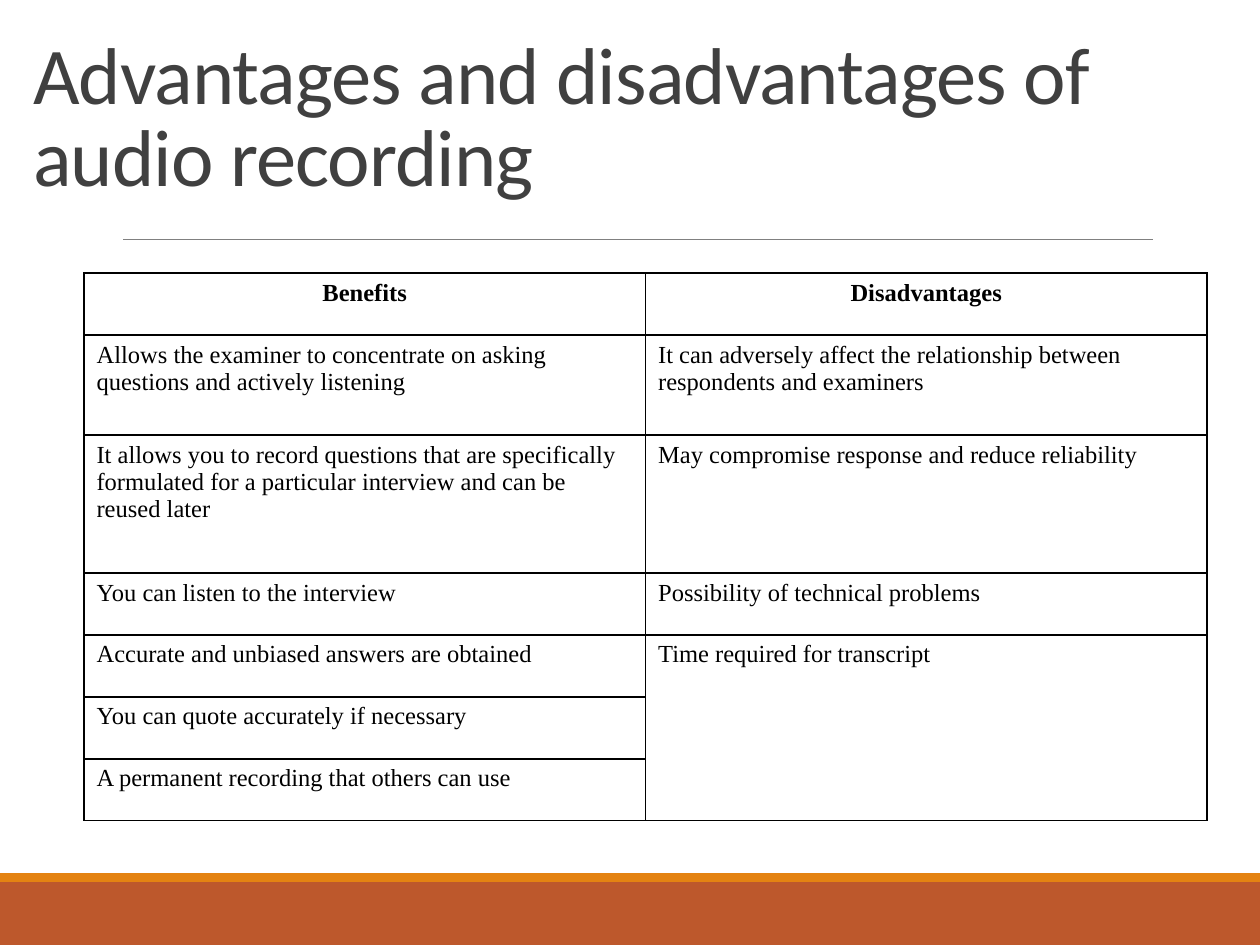
from lxml.etree import SubElement
from pptx import Presentation
from pptx.dml.color import RGBColor
from pptx.enum.shapes import MSO_CONNECTOR, MSO_SHAPE
from pptx.enum.text import MSO_ANCHOR, PP_ALIGN
from pptx.oxml.ns import qn
from pptx.util import Pt

WIDTH, HEIGHT = 720, 540
TITLE = "Advantages and disadvantages of audio recording"
HEADERS = ("Benefits", "Disadvantages")
BENEFITS = [
    "Allows the examiner to concentrate on asking questions and actively listening",
    "It allows you to record questions that are specifically formulated for a "
    "particular interview and can be reused later",
    "You can listen to the interview",
    "Accurate and unbiased answers are obtained",
    "You can quote accurately if necessary",
    "A permanent recording that others can use",
]
DISADVANTAGES = [
    "It can adversely affect the relationship between respondents and examiners",
    "May compromise response and reduce reliability",
    "Possibility of technical problems",
    "Time required for transcript",
]
ROW_HEIGHTS = [35.43, 57.14, 78.86] + [35.43] * 4
COLUMN_WIDTH = 320.9
FOOTER_BANDS = [(504, 36, "BD582C"), (499, 5, "E48312")]  # top, height, colour


def color(hex_string):
    return RGBColor.from_string(hex_string)


def add_band(slide, top, height, fill):
    band = slide.shapes.add_shape(
        MSO_SHAPE.RECTANGLE, 0, Pt(top), Pt(WIDTH), Pt(height))
    band.shadow.inherit = False
    band.fill.solid()
    band.fill.fore_color.rgb = color(fill)
    band.line.fill.background()


def add_rule(slide, left, right, top):
    rule = slide.shapes.add_connector(
        MSO_CONNECTOR.STRAIGHT, Pt(left), Pt(top), Pt(right), Pt(top))
    rule.line.color.rgb = color("808080")
    rule.line.width = Pt(0.5)
    SubElement(rule.element.spPr, qn("a:effectLst"))


def add_title(slide):
    box = slide.shapes.add_textbox(Pt(12), Pt(22), Pt(684), Pt(97.5))
    frame = box.text_frame
    frame.word_wrap = True
    frame.vertical_anchor = MSO_ANCHOR.BOTTOM
    paragraph = frame.paragraphs[0]
    paragraph.line_spacing = 0.85
    run = paragraph.add_run()
    run.text = TITLE
    run.font.name, run.font.size = "Calibri", Pt(46)
    run.font.color.rgb = color("404040")
    run.font._element.set("spc", "-50")


def set_borders(cell):
    properties = cell._tc.get_or_add_tcPr()
    for position, side in enumerate(("a:lnL", "a:lnR", "a:lnT", "a:lnB")):
        line = properties.makeelement(qn(side), {"w": str(Pt(1))})
        fill = SubElement(line, qn("a:solidFill"))
        SubElement(fill, qn("a:srgbClr"), val="000000")
        properties.insert(position, line)


def fill_cell(cell, text, is_header):
    cell.fill.background()
    set_borders(cell)
    paragraph = cell.text_frame.paragraphs[0]
    paragraph.alignment = PP_ALIGN.CENTER if is_header else PP_ALIGN.LEFT
    font = paragraph.font
    font.name, font.size, font.bold = "Times New Roman", Pt(14), is_header
    font.color.rgb = color("000000")
    if text:
        paragraph.add_run().text = text


def add_comparison(slide):
    columns = [[header, *items] for header, items
               in zip(HEADERS, (BENEFITS, DISADVANTAGES))]
    row_count = len(ROW_HEIGHTS)
    table = slide.shapes.add_table(
        row_count, len(columns), Pt(48), Pt(156),
        Pt(COLUMN_WIDTH * len(columns)), Pt(sum(ROW_HEIGHTS))).table
    table.first_row = table.horz_banding = False
    for row, height in zip(table.rows, ROW_HEIGHTS):
        row.height = Pt(height)
    for column_index, texts in enumerate(columns):
        table.columns[column_index].width = Pt(COLUMN_WIDTH)
        for row_index in range(row_count):
            text = texts[row_index] if row_index < len(texts) else ""
            fill_cell(table.cell(row_index, column_index), text, row_index == 0)
        if len(texts) < row_count:  # the last item fills the rest of its column
            table.cell(len(texts) - 1, column_index).merge(
                table.cell(row_count - 1, column_index))


def main():
    presentation = Presentation()
    presentation.slide_width, presentation.slide_height = Pt(WIDTH), Pt(HEIGHT)
    slide = presentation.slides.add_slide(presentation.slide_layouts[6])
    for band in FOOTER_BANDS:
        add_band(slide, *band)
    add_rule(slide, 70.5, 659, 136.8)
    add_title(slide)
    add_comparison(slide)
    presentation.save("out.pptx")


if __name__ == "__main__":
    main()
